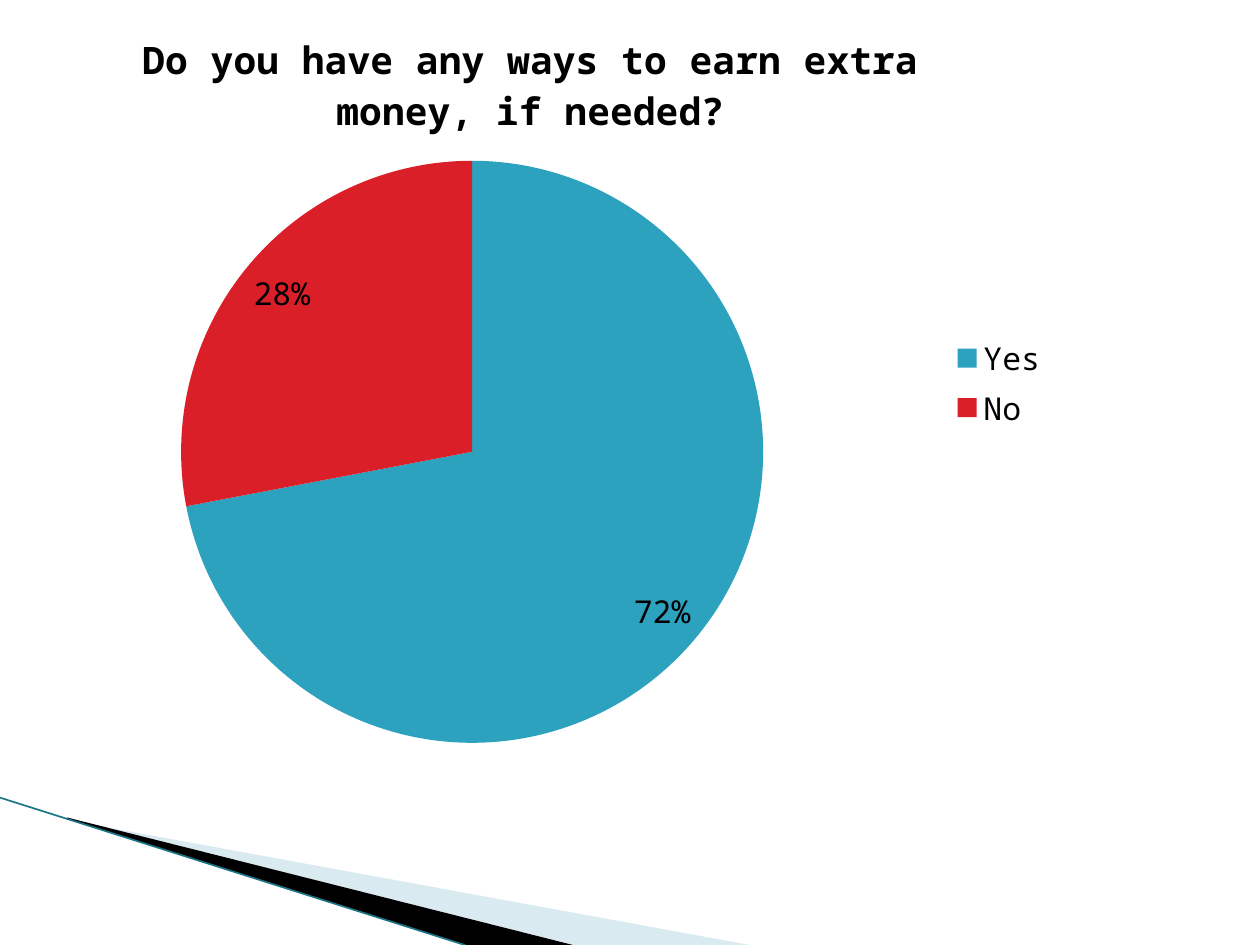
from lxml import etree
from pptx import Presentation
from pptx.chart.data import CategoryChartData
from pptx.dml.color import RGBColor
from pptx.enum.chart import XL_CHART_TYPE, XL_LABEL_POSITION, XL_LEGEND_POSITION
from pptx.oxml import parse_xml
from pptx.oxml.ns import nsdecls, qn
from pptx.util import Cm, Pt

PIE = XL_CHART_TYPE.PIE
INSIDE_END = XL_LABEL_POSITION.INSIDE_END
RIGHT = XL_LEGEND_POSITION.RIGHT
FONT = "Noto Sans Mono"
BLACK = "000000"
BLANK_LAYOUT = 6


def color(value):
    return RGBColor.from_string(value)


def format_text(font, size=18, bold=False, fill=BLACK):
    font.name = FONT
    font.size = Pt(size)
    font.bold = bold
    font.color.rgb = color(fill)


def write_text(frame, text, **style):
    paragraph = frame.paragraphs[0]
    span = paragraph.add_run()
    span.text = text
    format_text(span.font, **style)


def plot_layout(left, top, width, height):
    return parse_xml(
        f'<c:layout {nsdecls("c")}><c:manualLayout><c:layoutTarget val="inner"/>'
        '<c:xMode val="edge"/><c:yMode val="edge"/>'
        f'<c:x val="{left}"/><c:y val="{top}"/><c:w val="{width}"/><c:h val="{height}"/>'
        '</c:manualLayout></c:layout>'
    )


class SlideBuilder:
    def __init__(self, deck):
        self.page = deck.slides.add_slide(deck.slide_layouts[BLANK_LAYOUT])

    def polygon(self, points, fill, opacity=100):
        corners = [(Cm(x), Cm(y)) for x, y in points]
        builder = self.page.shapes.build_freeform(*corners[0])
        builder.add_line_segments(corners[1:], close=True)
        shape = builder.convert_to_shape()
        shape.shadow.inherit = False
        shape.fill.solid()
        shape.fill.fore_color.rgb = color(fill)
        shape.line.fill.background()
        if opacity < 100:
            tint = shape.fill._xPr.find(f".//{qn('a:srgbClr')}")
            etree.SubElement(tint, qn("a:alpha"), val=str(opacity * 1000))

    def line(self, start, end, stroke, width):
        ends = [Cm(value) for value in (*start, *end)]
        connector = self.page.shapes.add_connector(1, *ends)
        connector.line.color.rgb = color(stroke)
        connector.line.width = Pt(width)
        etree.SubElement(connector._element.spPr, qn("a:effectLst"))

    def pie(self, title, answers, fills, left, top, width, height):
        data = CategoryChartData()
        data.categories = list(answers)
        data.add_series("Series 1", list(answers.values()))
        frame = self.page.shapes.add_chart(
            PIE, Cm(left), Cm(top), Cm(width), Cm(height), data
        )
        chart = frame.chart
        format_text(chart.font)
        chart.has_title = True
        write_text(chart.chart_title.text_frame, title, size=21.6, bold=True)
        chart.chart_title.include_in_layout = False
        chart.has_legend = True
        chart.legend.position = RIGHT
        chart.legend.include_in_layout = False
        format_text(chart.legend.font)

        plot = chart.plots[0]
        plot.vary_by_categories = True
        for index, fill in enumerate(fills):
            sector = plot.series[0].points[index].format
            sector.fill.solid()
            sector.fill.fore_color.rgb = color(fill)
            sector.line.fill.background()
        plot.has_data_labels = True
        labels = plot.data_labels
        labels.show_percentage = True
        labels.show_value = False
        labels.number_format = "0%"
        labels.number_format_is_linked = False
        labels.position = INSIDE_END
        format_text(labels.font)

        area = chart._chartSpace.chart.plotArea
        for layout in area.findall(qn("c:layout")):
            area.remove(layout)
        area.insert(0, plot_layout(0.17, 0.21, 0.55, 0.76))


def main():
    deck = Presentation()
    deck.slide_width, deck.slide_height = Cm(25.4), Cm(19.05)
    slide = SlideBuilder(deck)
    slide.polygon(
        [(1.4, 16.54), (15.11, 19.05), (11.58, 19.05), (1.4, 16.51)],
        "A0CBDC", opacity=40,
    )
    slide.polygon(
        [(1.35, 16.48), (11.55, 19.05), (9.4, 19.05), (1.37, 16.51)], BLACK
    )
    slide.line((0, 16.08), (9.37, 19.05), "1B7587", 0.95)
    slide.pie(
        "Do you have any ways to earn extra money, if needed?",
        {"Yes": 72, "No": 28}, ["2DA2BF", "DA1F28"],
        left=0, top=0, width=21.39, height=15.44,
    )
    deck.save("out.pptx")


if __name__ == "__main__":
    main()
